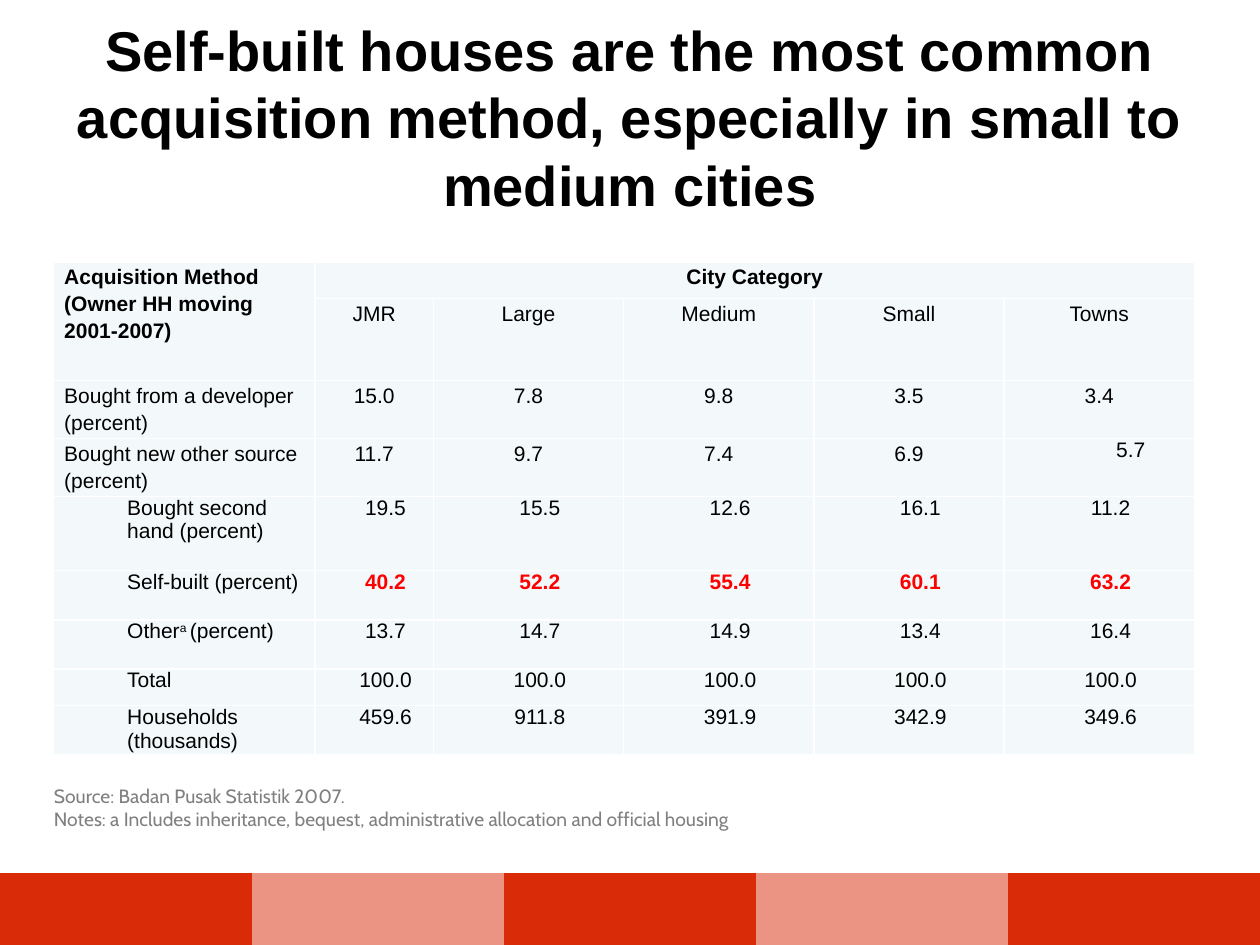
import pptx
import pptx.util
import pptx.dml.color
import pptx.enum.text
import pptx.oxml
import pptx.oxml.ns

COLORS = {"text": "000000", "accent": "FF0000", "cell": "F3F9FA",
          "border": "FFFFFF", "note": "808080", "band": "DA2B08"}
NO_STYLE = "{2D5ABB26-0587-4C30-8999-92F81FD0307C}"
ALIGN = pptx.enum.text.PP_ALIGN
ANCHOR = pptx.enum.text.MSO_ANCHOR
AUTO = pptx.enum.text.MSO_AUTO_SIZE

prs = pptx.Presentation()
prs.slide_width = pptx.util.Inches(10)
prs.slide_height = pptx.util.Inches(7.5)
U = prs.slide_width // 100  # grid unit: one hundredth of the slide width
s = prs.slides.add_slide(prs.slide_layouts[5])


def add_run(p, text, size, color, bold=False, font="Arial"):
    r = p.add_run()
    r.text = text
    r.font.size = pptx.util.Pt(size)
    r.font.name = font
    r.font.bold = bold
    r.font.color.rgb = pptx.dml.color.RGBColor.from_string(COLORS[color])
    return r


def add_grid(left, top, widths, heights):
    sp = s.shapes.add_table(len(heights), len(widths), int(left * U), int(top * U),
                            int(sum(widths) * U), int(sum(heights) * U))
    tbl = sp.table
    tbl.first_row = tbl.horz_banding = False
    tbl._tbl.tblPr.find(pptx.oxml.ns.qn("a:tableStyleId")).text = NO_STYLE
    for col, width in zip(tbl.columns, widths):
        col.width = int(width * U)
    for row, height in zip(tbl.rows, heights):
        row.height = int(height * U)
    return tbl


# Title
sp = s.shapes.title
sp.left, sp.top, sp.width, sp.height = 5 * U, 3 * U, 90 * U, int(12.5 * U)
tf = sp.text_frame
tf.word_wrap = True
tf.auto_size = AUTO.NONE
tf.vertical_anchor = ANCHOR.MIDDLE
p = tf.paragraphs[0]
p.alignment = ALIGN.CENTER
add_run(p, "Self-built houses are the most common acquisition method, "
           "especially in small to medium cities", 32, "text", True)

# Acquisition table: the first two rows are the header
rows = [
    ["Acquisition Method (Owner HH moving 2001-2007)", "City Category", "", "", "", ""],
    ["", "JMR", "Large", "Medium", "Small", "Towns"],
    ["Bought from a developer (percent)", "15.0", "7.8", "9.8", "3.5", "3.4"],
    ["Bought new other source (percent)", "11.7", "9.7", "7.4", "6.9", "5.7"],
    ["Bought second hand (percent)", "19.5", "15.5", "12.6", "16.1", "11.2"],
    ["Self-built (percent)", "40.2", "52.2", "55.4", "60.1", "63.2"],
    ["Other^a ^(percent)", "13.7", "14.7", "14.9", "13.4", "16.4"],
    ["Total", "100.0", "100.0", "100.0", "100.0", "100.0"],
    ["Households (thousands)", "459.6", "911.8", "391.9", "342.9", "349.6"],
]
SELF_BUILT, FIRST_INDENTED = 5, 4
tbl = add_grid(4.2, 20.8, [20.8, 9.4] + [15.1] * 4,
               [2.9, 6.5, 4.6, 4.6, 5.9, 3.9, 3.9, 2.9, 3.9])
tbl.cell(0, 0).merge(tbl.cell(1, 0))
tbl.cell(0, 1).merge(tbl.cell(0, 5))

for i, values in enumerate(rows):
    for j, value in enumerate(values):
        cell = tbl.cell(i, j)
        cell.margin_left = cell.margin_right = int(0.9 * U)
        cell.margin_top = cell.margin_bottom = 0
        tcPr = cell._tc.get_or_add_tcPr()
        for side in ("lnL", "lnR", "lnT", "lnB"):
            tcPr.append(pptx.oxml.parse_xml(
                f'<a:{side} {pptx.oxml.ns.nsdecls("a")} w="12700"><a:solidFill>'
                f'<a:srgbClr val="{COLORS["border"]}"/></a:solidFill></a:{side}>'))
        cell.fill.solid()
        cell.fill.fore_color.rgb = pptx.dml.color.RGBColor.from_string(COLORS["cell"])
        if not value:
            continue
        p = cell.text_frame.paragraphs[0]
        p.alignment = ALIGN.CENTER if j else ALIGN.LEFT
        stray = value == "5.7"  # indented like the rows below it
        if i >= FIRST_INDENTED or stray:
            pPr = p._p.get_or_add_pPr()
            pPr.set("marL", str(5 * U))
            pPr.set("indent", str(int(-3.2 * U) if j and not stray else 0))
        else:
            p.line_spacing = 1.15
        highlight = i == SELF_BUILT and j > 0
        # Text between carets is superscript
        for n, part in enumerate(value.split("^")):
            r = add_run(p, part, 12, "accent" if highlight else "text",
                        highlight or i == 0)
            if n % 2:
                r.font._element.set("baseline", "30000")

# Source and notes
sp = s.shapes.add_textbox(int(3.3 * U), int(61.7 * U), int(85.6 * U), int(4.7 * U))
tf = sp.text_frame
tf.word_wrap = True
tf.auto_size = AUTO.SHAPE_TO_FIT_TEXT
tf.vertical_anchor = ANCHOR.MIDDLE
add_run(tf.paragraphs[0], "Source: Badan Pusak Statistik 2007.", 11, "note", font="Cabin")
p = tf.add_paragraph()
add_run(p, "Notes: a Includes inheritance, bequest, administrative allocation "
           "and official housing", 11, "note", font="Cabin")
add_run(p, " ", 6, "text")

# Footer band of alternating solid and half-transparent cells
tbl = add_grid(0, 69.3, [20] * 5, [5.7])
for j in range(5):
    cell = tbl.cell(0, j)
    cell.fill.solid()
    cell.fill.fore_color.rgb = pptx.dml.color.RGBColor.from_string(COLORS["band"])
    if j % 2:
        clr = cell._tc.tcPr.find(".//" + pptx.oxml.ns.qn("a:srgbClr"))
        clr.append(pptx.oxml.parse_xml(
            f'<a:alpha {pptx.oxml.ns.nsdecls("a")} val="50000"/>'))

prs.save("out.pptx")
